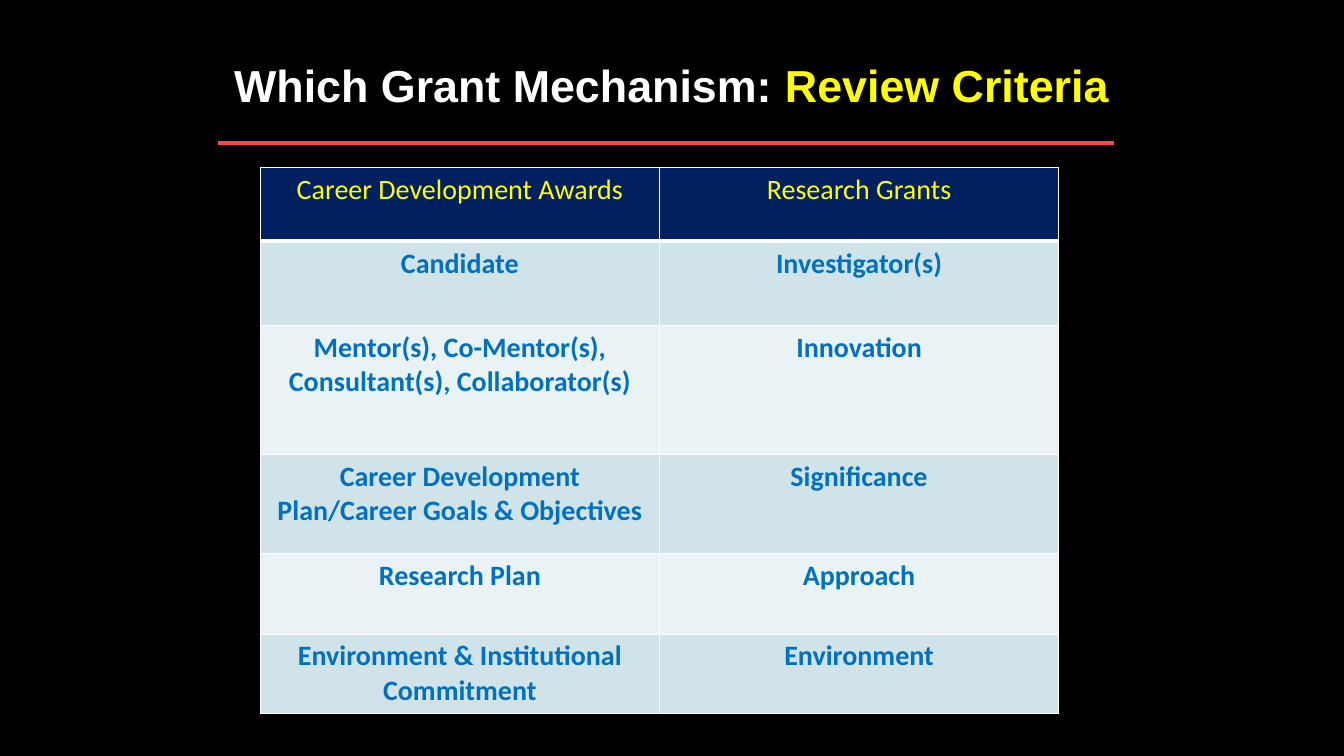
from dataclasses import dataclass

from lxml.etree import SubElement
from pptx import Presentation
from pptx.dml.color import RGBColor
from pptx.enum.shapes import MSO_CONNECTOR as Connector
from pptx.enum.text import MSO_ANCHOR as Anchor, MSO_AUTO_SIZE as AutoSize, PP_ALIGN as Align
from pptx.oxml.ns import qn
from pptx.util import Cm, Pt

COLORS = {
    "background": "000000",
    "white": "FFFFFF",
    "yellow": "FFFF00",
    "rule": "FF4545",
    "header": "002060",
    "criterion": "0070C0",
    "dark_band": "CFE3E8",
    "light_band": "E9F2F4",
}


@dataclass(frozen=True)
class CriteriaRow:
    career: str
    research: str
    height: float  # centimetres


@dataclass(frozen=True)
class RowStyle:
    fill: str
    text: str
    bold: bool
    bottom: float = 1  # border width in points


ROWS = [
    CriteriaRow("Career Development Awards", "Research Grants", 1.85),
    CriteriaRow("Candidate", "Investigator(s)", 2.13),
    CriteriaRow("Mentor(s), Co-Mentor(s), Consultant(s), Collaborator(s)", "Innovation", 3.25),
    CriteriaRow("Career Development Plan/Career Goals & Objectives", "Significance", 2.49),
    CriteriaRow("Research Plan", "Approach", 2.03),
    CriteriaRow("Environment & Institutional Commitment", "Environment", 2.01),
]
HEADER_STYLE = RowStyle("header", "yellow", False, bottom=3)
BAND_STYLES = [
    RowStyle("light_band", "criterion", True),
    RowStyle("dark_band", "criterion", True),
]


def color(name: str) -> RGBColor:
    return RGBColor.from_string(COLORS[name])


def style_font(font, face: str, size: float, color_name: str, bold: bool) -> None:
    font.name = face
    font.size = Pt(size)
    font.bold = bold
    font.color.rgb = color(color_name)


def add_borders(cell, bottom: float) -> None:
    properties = cell._tc.get_or_add_tcPr()
    widths = {"a:lnL": 1, "a:lnR": 1, "a:lnT": 1, "a:lnB": bottom}
    for position, (tag, width) in enumerate(widths.items()):
        line = SubElement(properties, qn(tag), w=str(Pt(width)))
        fill = SubElement(line, qn("a:solidFill"))
        SubElement(fill, qn("a:srgbClr"), val=COLORS["white"])
        properties.insert(position, line)


def fill_cell(cell, text: str, style: RowStyle) -> None:
    cell.fill.solid()
    cell.fill.fore_color.rgb = color(style.fill)
    add_borders(cell, style.bottom)
    para = cell.text_frame.paragraphs[0]
    para.text = text
    para.alignment = Align.CENTER
    style_font(para.runs[0].font, "Calibri", 20, style.text, style.bold)


def add_title(page) -> None:
    title = page.shapes.title
    title.left, title.top, title.width, title.height = Cm(5.28), Cm(1.27), Cm(23.29), Cm(1.7)
    frame = title.text_frame
    frame.auto_size = AutoSize.NONE
    frame.word_wrap = True
    frame.vertical_anchor = Anchor.MIDDLE
    para = frame.paragraphs[0]
    para.alignment = Align.CENTER
    for text, color_name in (("Which Grant Mechanism: ", "white"), ("Review Criteria", "yellow")):
        span = para.add_run()
        span.text = text
        style_font(span.font, "Arial", 32, color_name, True)


def add_criteria_table(page) -> None:
    height = sum(row.height for row in ROWS)
    frame = page.shapes.add_table(len(ROWS), 2, Cm(6.56), Cm(4.23), Cm(20.12), Cm(height))
    table = frame.table
    for index, row in enumerate(ROWS):
        table.rows[index].height = Cm(row.height)
        style = BAND_STYLES[index % 2] if index else HEADER_STYLE
        for column, text in enumerate((row.career, row.research)):
            fill_cell(table.cell(index, column), text, style)


def add_title_rule(page) -> None:
    rule = page.shapes.add_connector(Connector.STRAIGHT, Cm(5.5), Cm(3.6), Cm(28.08), Cm(3.6))
    rule.line.color.rgb = color("rule")
    rule.line.width = Pt(3)
    SubElement(rule._element.spPr, qn("a:effectLst"))


def main() -> None:
    deck = Presentation()
    deck.slide_width, deck.slide_height = Cm(33.87), Cm(19.05)
    page = deck.slides.add_slide(deck.slide_layouts[5])

    # Background
    page.background.fill.solid()
    page.background.fill.fore_color.rgb = color("background")

    # Heading, table and the rule between them
    add_title(page)
    add_criteria_table(page)
    add_title_rule(page)

    deck.save("out.pptx")


if __name__ == "__main__":
    main()
